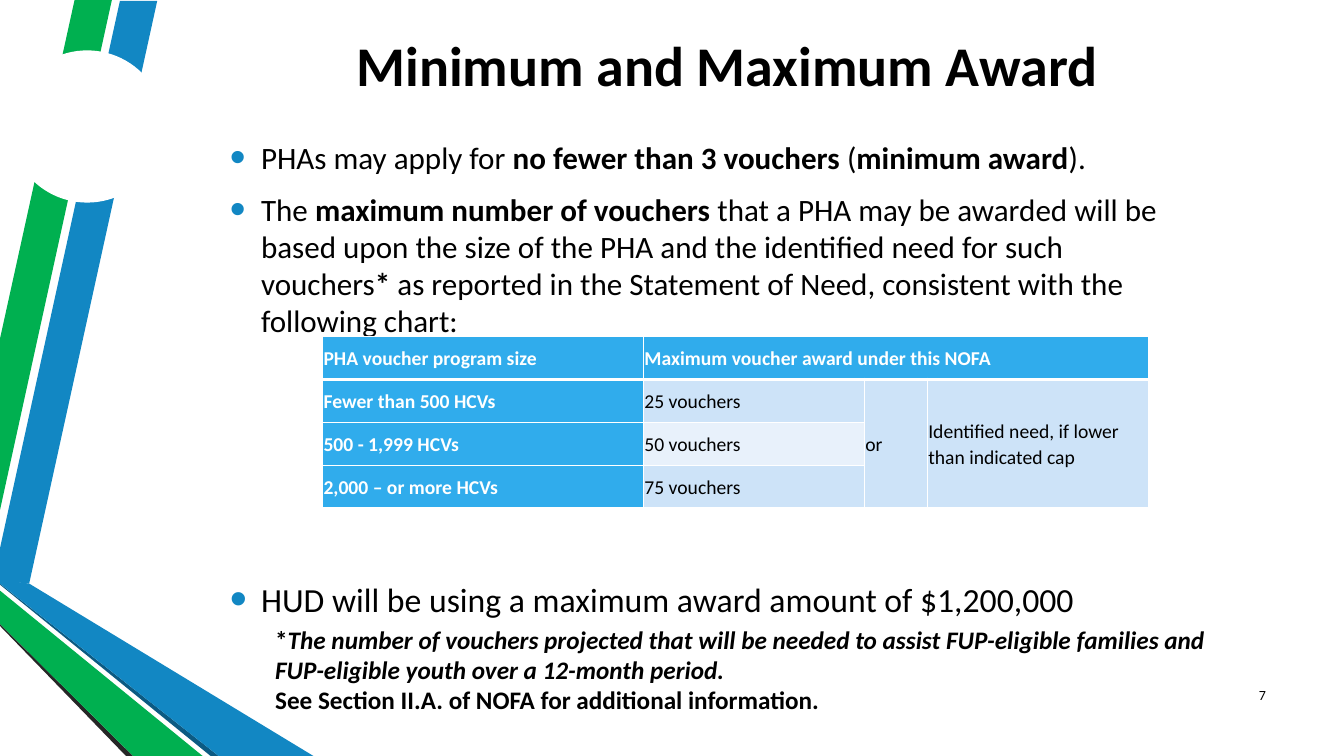
from dataclasses import dataclass

from lxml import etree
from pptx import Presentation
from pptx import util as u
from pptx.dml.color import RGBColor
from pptx.enum import shapes, text
from pptx.oxml.ns import qn

# The slide is a grid of 160 columns by 90 rows of square units.
UNIT = u.Inches(7.5) / 90


@dataclass(frozen=True)
class Theme:
    font: str = "Calibri"
    black: str = "000000"
    white: str = "FFFFFF"
    blue: str = "1287C3"
    navy: str = "0C5A82"
    green: str = "00B050"
    charcoal: str = "262626"
    header: str = "30ACEC"
    band_dark: str = "CDE3F8"
    band_light: str = "E8F1FB"
    title: float = 40
    bullet: float = 22.2
    large_bullet: float = 24.1
    note: float = 18
    table: float = 14
    number: float = 10


@dataclass(frozen=True)
class Box:
    column: float
    row: float
    columns: float
    rows: float

    def emu(self) -> list[int]:
        return [grid(value) for value in (self.column, self.row, self.columns, self.rows)]


@dataclass(frozen=True)
class Strip:
    colour: str
    points: tuple[tuple[float, float], ...]


@dataclass(frozen=True)
class Run:
    text: str
    bold: bool = False
    italic: bool = False


@dataclass(frozen=True)
class TextBlock:
    box: Box
    paragraphs: list[list[Run]]
    size: float
    align: text.PP_ALIGN = text.PP_ALIGN.LEFT
    anchor: text.MSO_ANCHOR = text.MSO_ANCHOR.TOP
    bulleted: bool = False


THEME = Theme()

STRIPS = [
    Strip(THEME.blue, ((0, 65.28), (0, 69.12), (3.48, 69.48), (18.72, 0.12), (14.28, 0.12))),
    Strip(THEME.green, ((13.32, 0), (8.88, 0), (0, 40.32), (0, 60.72))),
    Strip(THEME.charcoal, ((0, 74.28), (0, 74.52), (15, 90), (15.84, 90))),
    Strip(THEME.navy, ((0, 69.48), (0, 69.6), (25.08, 90), (26.04, 90))),
    Strip(THEME.blue, ((0, 69.48), (26.04, 90), (37.32, 90), (3.48, 69.48), (0, 69))),
    Strip(THEME.green, ((0, 74.28), (15.84, 90), (24.12, 90), (0, 70.32))),
]
GAP = Box(1.2, 6, 18.36, 18.12)

TEXT_BLOCKS = [
    TextBlock(Box(19.2, 2.16, 134.76, 10.92), [[Run("Minimum and Maximum Award", True)]],
              THEME.title, text.PP_ALIGN.CENTER, text.MSO_ANCHOR.MIDDLE),
    TextBlock(Box(27.36, 16.44, 115.08, 24), [
        [Run("PHAs may apply for "), Run("no fewer than 3 vouchers ", True), Run("("),
         Run("minimum award", True), Run(").")],
        [Run("The "), Run("maximum number of vouchers", True),
         Run(" that a PHA may be awarded will be based upon the size of the PHA and the "
             "identified need for such vouchers"), Run("*", True),
         Run(" as reported in the Statement of Need, consistent with the following chart:")],
    ], THEME.bullet, bulleted=True),
    TextBlock(Box(27.36, 68.9, 115.08, 5),
              [[Run("HUD will be using a maximum award amount of $1,200,000")]],
              THEME.large_bullet, bulleted=True),
    TextBlock(Box(32.76, 74.28, 114.12, 14.52), [
        [Run("*", True),
         Run("The number of vouchers projected that will be needed to assist FUP-eligible "
             "families and FUP-eligible youth over a 12-month period.", True, True)],
        [Run("See Section II.A. of NOFA for additional information.", True)],
    ], THEME.note),
    TextBlock(Box(145.92, 80.28, 4.8, 4.8), [[Run("7")]],
              THEME.number, text.PP_ALIGN.RIGHT, text.MSO_ANCHOR.MIDDLE),
]

TABLE_BOX = Box(38.4, 40.08, 98.4, 20.4)
TABLE_COLUMNS = (38.2, 26.3, 7.5, 26.4)
AWARDS = [
    ["PHA voucher program size", "Maximum voucher award under this NOFA", "", ""],
    ["Fewer than 500 HCVs", "25 vouchers", "or",
     "Identified need, if lower\nthan indicated cap"],
    ["500 - 1,999 HCVs", "50 vouchers", "", ""],
    ["2,000 – or more HCVs", "75 vouchers", "", ""],
]
MERGES = [((0, 1), (0, 3)), ((1, 2), (3, 2)), ((1, 3), (3, 3))]


def grid(units: float) -> int:
    return round(units * UNIT)


def rgb(colour: str) -> RGBColor:
    return RGBColor.from_string(colour)


def add_bullet(paragraph) -> None:
    properties = paragraph._p.get_or_add_pPr()
    properties.set("marL", str(u.Inches(0.31)))
    properties.set("indent", str(-u.Inches(0.31)))
    colour = etree.SubElement(properties, qn("a:buClr"))
    etree.SubElement(colour, qn("a:srgbClr"), val=THEME.blue)
    etree.SubElement(properties, qn("a:buSzPct"), val="145000")
    etree.SubElement(properties, qn("a:buFont"), typeface="Arial")
    etree.SubElement(properties, qn("a:buChar"), char="•")


def write_text(frame, paragraphs: list[list[Run]], *, size: float, colour: str = THEME.black,
               align=text.PP_ALIGN.LEFT, bulleted: bool = False, before: float = 0,
               after: float = 0, line_spacing: float = 1) -> None:
    for index, runs in enumerate(paragraphs):
        paragraph = frame.add_paragraph() if index else frame.paragraphs[0]
        if bulleted:
            add_bullet(paragraph)
        paragraph.alignment = align
        paragraph.line_spacing = line_spacing
        paragraph.space_before = u.Pt(before if index else 0)
        paragraph.space_after = u.Pt(after)
        for item in runs:
            run = paragraph.add_run()
            run.text = item.text
            run.font.name = THEME.font
            run.font.size = u.Pt(size)
            run.font.bold = item.bold
            run.font.italic = item.italic
            run.font.color.rgb = rgb(colour)


def paint(shape, colour: str) -> None:
    shape.shadow.inherit = False
    shape.fill.solid()
    shape.fill.fore_color.rgb = rgb(colour)
    shape.line.fill.background()


def draw_strip(slide, strip: Strip) -> None:
    points = [(grid(x), grid(y)) for x, y in strip.points]
    builder = slide.shapes.build_freeform(*points[0])
    builder.add_line_segments(points[1:])
    paint(builder.convert_to_shape(), strip.colour)


def draw_text(slide, block: TextBlock) -> None:
    frame = slide.shapes.add_textbox(*block.box.emu()).text_frame
    frame.word_wrap = True
    frame.vertical_anchor = block.anchor
    frame.margin_left = frame.margin_right = frame.margin_top = frame.margin_bottom = 0
    write_text(frame, block.paragraphs, size=block.size, align=block.align,
               bulleted=block.bulleted, before=4.4 if block.bulleted else 0,
               after=6 if block.bulleted else 0)


def add_borders(cell, top: float, bottom: float) -> None:
    properties = cell._tc.get_or_add_tcPr()
    for side, width in (("L", 1), ("R", 1), ("T", top), ("B", bottom)):
        line = etree.SubElement(properties, qn(f"a:ln{side}"), w=str(u.Pt(width)))
        fill = etree.SubElement(line, qn("a:solidFill"))
        etree.SubElement(fill, qn("a:srgbClr"), val=THEME.white)


def draw_awards_table(slide) -> None:
    table = slide.shapes.add_table(len(AWARDS), len(TABLE_COLUMNS), *TABLE_BOX.emu()).table
    for column, width in zip(table.columns, TABLE_COLUMNS):
        column.width = grid(width)
    for row, values in enumerate(AWARDS):
        for column, value in enumerate(values):
            cell = table.cell(row, column)
            heading = row == 0 or column == 0
            light = row == 2 and column == 1
            add_borders(cell, 3 if row == 1 else 1, 3 if row == 0 else 1)
            cell.fill.solid()
            cell.fill.fore_color.rgb = rgb(
                THEME.header if heading else THEME.band_light if light else THEME.band_dark)
            cell.vertical_anchor = text.MSO_ANCHOR.MIDDLE
            cell.margin_left = cell.margin_right = u.Inches(0.01)
            cell.margin_top = cell.margin_bottom = u.Inches(0.01)
            if value:
                lines = [[Run(line, heading)] for line in value.split("\n")]
                write_text(cell.text_frame, lines, size=THEME.table, line_spacing=1.07,
                           colour=THEME.white if heading else THEME.black,
                           after=6 if len(lines) == 1 else 0)
    for first, last in MERGES:
        table.cell(*first).merge(table.cell(*last))


def main() -> None:
    presentation = Presentation()
    presentation.slide_width = grid(160)
    presentation.slide_height = grid(90)
    slide = presentation.slides.add_slide(presentation.slide_layouts[6])
    for strip in STRIPS:
        draw_strip(slide, strip)
    paint(slide.shapes.add_shape(shapes.MSO_SHAPE.OVAL, *GAP.emu()), THEME.white)
    for block in TEXT_BLOCKS:
        draw_text(slide, block)
    draw_awards_table(slide)
    presentation.save("out.pptx")


if __name__ == "__main__":
    main()
